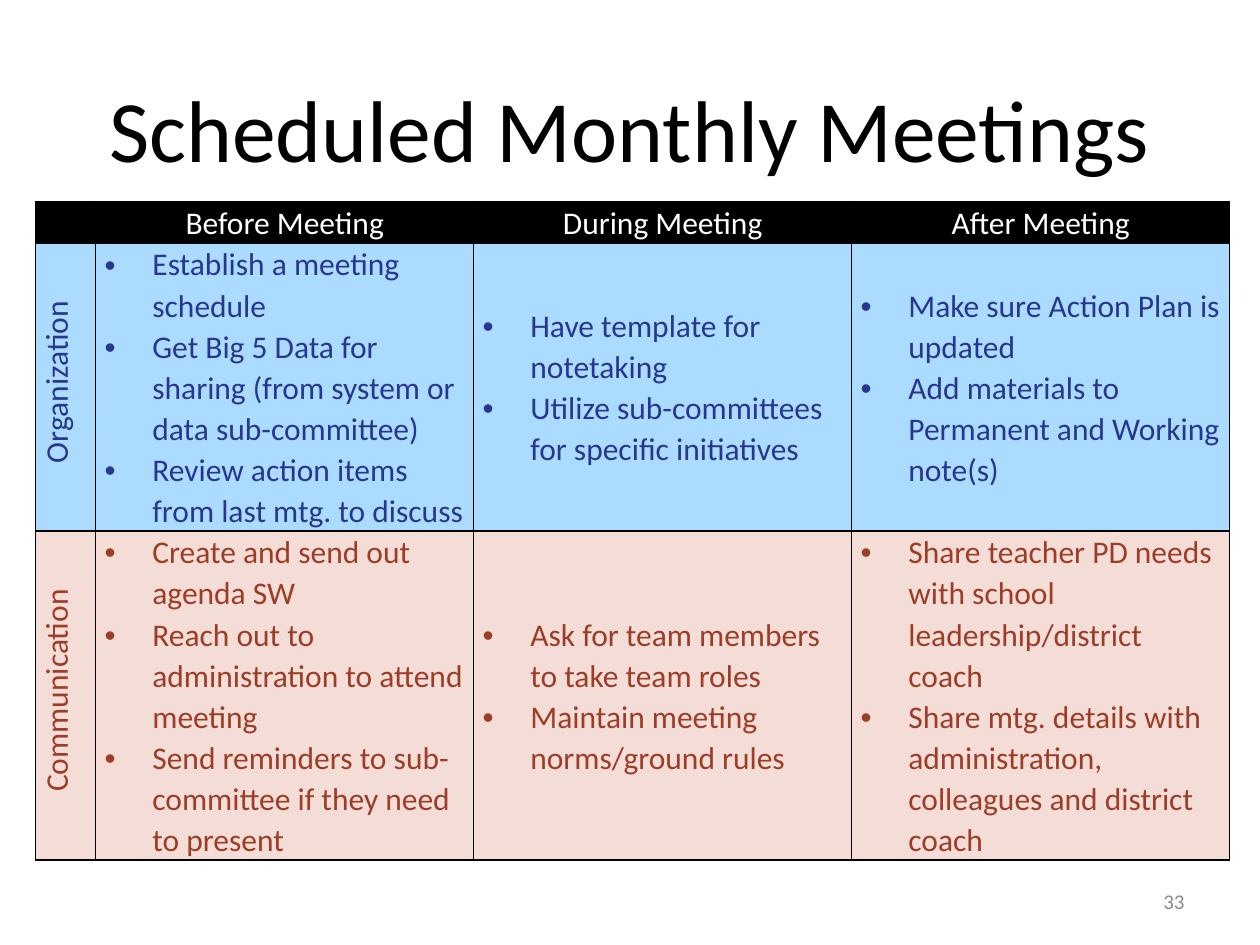
from dataclasses import dataclass

from lxml import etree
from pptx import Presentation
from pptx.dml.color import RGBColor
from pptx.enum.text import MSO_ANCHOR, PP_ALIGN
from pptx.oxml.ns import qn
from pptx.util import Inches, Pt

CENTER, RIGHT = PP_ALIGN.CENTER, PP_ALIGN.RIGHT
TOP, MIDDLE = MSO_ANCHOR.TOP, MSO_ANCHOR.MIDDLE


@dataclass(frozen=True)
class Theme:
    font: str = "Calibri"
    black: str = "000000"
    white: str = "FFFFFF"
    gray: str = "8C8C8C"
    blue: str = "273791"
    sky: str = "ABDBFF"
    rust: str = "9C3D28"
    blush: str = "F5DDD7"
    title: int = 50
    body: int = 18
    small: int = 12


THEME = Theme()

HEADS = ["", "Before Meeting", "During Meeting", "After Meeting"]
# Label, ink, fill, then one list of points for each stage
TOPICS = [
    ("Organization", THEME.blue, THEME.sky, [
        ["Establish a meeting schedule",
         "Get Big 5 Data for sharing (from system or data sub-committee)",
         "Review action items from last mtg. to discuss"],
        ["Have template for notetaking",
         "Utilize sub-committees for specific initiatives"],
        ["Make sure Action Plan is updated",
         "Add materials to Permanent and Working note(s)"],
    ]),
    ("Communication", THEME.rust, THEME.blush, [
        ["Create and send out agenda SW",
         "Reach out to administration to attend meeting",
         "Send reminders to sub-committee if they need to present"],
        ["Ask for team members to take team roles",
         "Maintain meeting norms/ground rules"],
        ["Share teacher PD needs with school leadership/district coach",
         "Share mtg. details with administration, colleagues and district coach"],
    ]),
]
COLS = [0.48, 3, 3, 3]
ROWS = [0.33, 2.28, 2.61]


def style(font, size, ink):
    font.name = THEME.font
    font.size = Pt(size)
    font.color.rgb = RGBColor.from_string(ink)


def place(shape, box):
    shape.left, shape.top, shape.width, shape.height = map(Inches, box)


def add_title(slide, box):
    title = slide.shapes.title
    place(title, box)
    frame = title.text_frame
    frame.text = "Scheduled Monthly Meetings"
    frame.vertical_anchor = MIDDLE
    frame.margin_bottom = Inches(0.28)
    para = frame.paragraphs[0]
    para.alignment = CENTER
    style(para.runs[0].font, THEME.title, THEME.black)


def add_edges(cell):
    props = cell._tc.get_or_add_tcPr()
    for side in ("lnL", "lnR", "lnT", "lnB"):
        line = etree.SubElement(props, qn(f"a:{side}"), w=str(Pt(1)))
        fill = etree.SubElement(line, qn("a:solidFill"))
        etree.SubElement(fill, qn("a:srgbClr"), val=THEME.black)


def fill_cell(cell, lines, ink, fill, anchor=TOP):
    add_edges(cell)
    cell.fill.solid()
    cell.fill.fore_color.rgb = RGBColor.from_string(fill)
    cell.margin_left = cell.margin_right = Inches(0.07)
    cell.margin_top = cell.margin_bottom = 0
    cell.vertical_anchor = anchor
    cell.text_frame.text = "\n".join(lines)
    for para in cell.text_frame.paragraphs:
        para.alignment = CENTER
        para.line_spacing = 1.07
        style(para.font, THEME.body, ink)
        for run in para.runs:
            style(run.font, THEME.body, ink)
            run.font.bold = False


def turn_label(cell):
    cell._tc.get_or_add_tcPr().set("vert", "vert270")
    props = cell.text_frame.paragraphs[0]._p.get_or_add_pPr()
    props.set("marL", str(Inches(0.08)))


def add_bullets(cell):
    for para in cell.text_frame.paragraphs:
        para.alignment = PP_ALIGN.LEFT
        props = para._p.get_or_add_pPr()
        props.set("marL", str(Inches(0.38)))
        props.set("indent", str(-Inches(0.38)))
        mark = etree.Element(qn("a:buChar"), char="•")
        props.find(qn("a:lnSpc")).addnext(mark)
        mark.addprevious(etree.Element(qn("a:buFont"), typeface="Arial"))


def add_grid(slide, box):
    shape = slide.shapes.add_table(len(ROWS), len(COLS), *map(Inches, box))
    table = shape.table
    for col, width in zip(table.columns, COLS):
        col.width = Inches(width)
    for row, height in zip(table.rows, ROWS):
        row.height = Inches(height)

    # Stage heads
    for c, head in enumerate(HEADS):
        fill_cell(table.cell(0, c), [head], THEME.white, THEME.black)

    # Topic rows: turned label, then bulleted points
    for r, (label, ink, fill, stages) in enumerate(TOPICS, 1):
        fill_cell(table.cell(r, 0), [label], ink, fill)
        turn_label(table.cell(r, 0))
        for c, points in enumerate(stages, 1):
            fill_cell(table.cell(r, c), points, ink, fill, MIDDLE)
            add_bullets(table.cell(r, c))


def add_number(slide, box):
    frame = slide.shapes.add_textbox(*map(Inches, box)).text_frame
    frame.word_wrap = True
    frame.vertical_anchor = MIDDLE
    frame.text = "33"
    para = frame.paragraphs[0]
    para.alignment = RIGHT
    style(para.runs[0].font, THEME.small, THEME.gray)


def main():
    deck = Presentation()
    deck.slide_width, deck.slide_height = Inches(10), Inches(7.5)
    slide = deck.slides.add_slide(deck.slide_layouts[5])
    add_title(slide, (0.5, 0.5, 9, 1.25))
    add_grid(slide, (0.28, 1.6, sum(COLS), sum(ROWS)))
    add_number(slide, (7.17, 6.95, 2.33, 0.4))
    deck.save("out.pptx")


if __name__ == "__main__":
    main()
